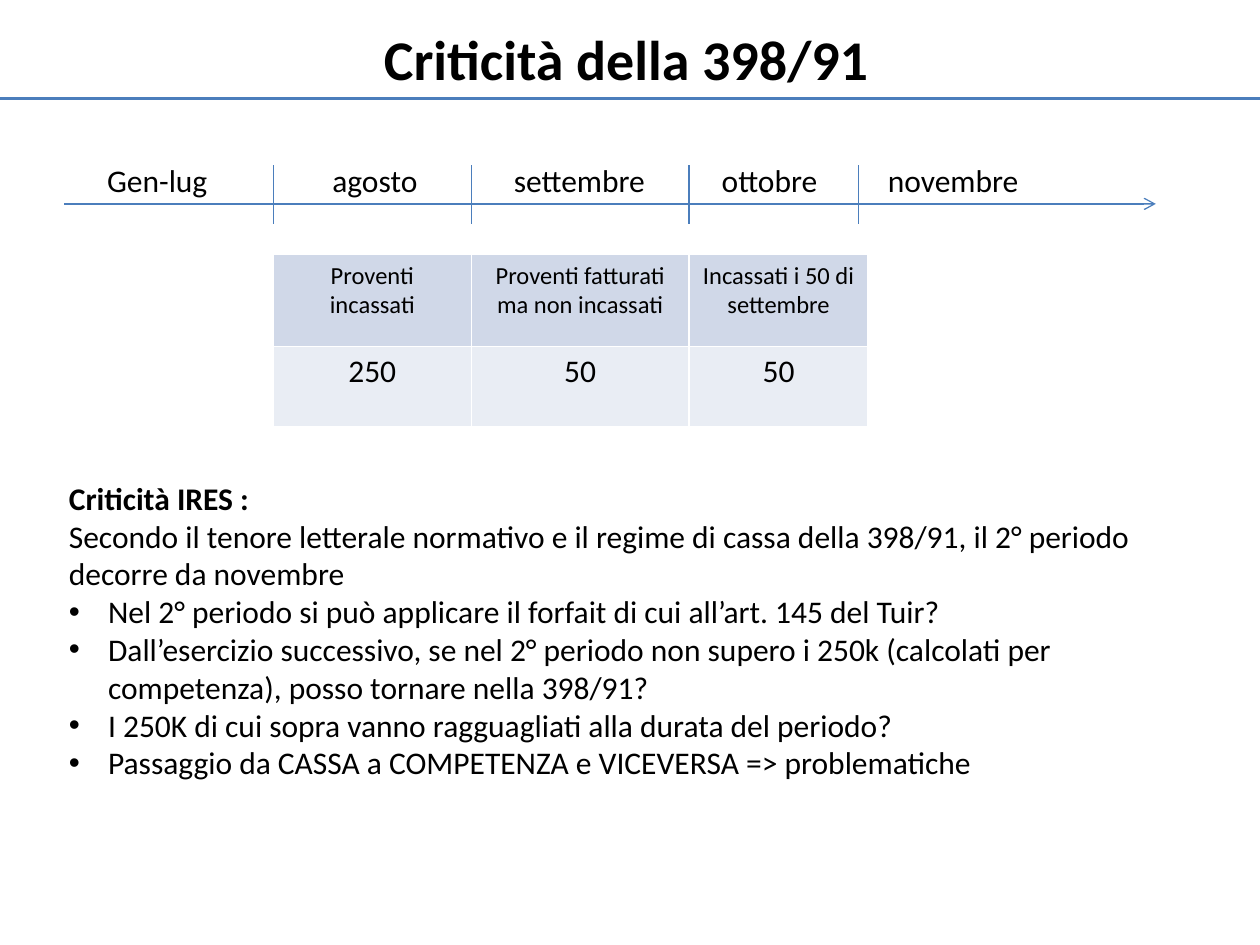
from pptx import Presentation
from pptx.dml.color import RGBColor
from pptx.enum.shapes import MSO_CONNECTOR
from pptx.enum.text import MSO_AUTO_SIZE, PP_ALIGN
from pptx.oxml.ns import qn
from pptx.util import Cm, Pt
from lxml.etree import SubElement

BLACK = RGBColor(0x00, 0x00, 0x00)
BLUE = RGBColor(0x4B, 0x7E, 0xBC)
HEAD = RGBColor(0xD0, 0xD8, 0xE8)
BODY = RGBColor(0xE9, 0xED, 0xF4)

# Content; lengths in cm
title = "Criticità della 398/91"
months = [  # name, left, width
    ("Gen-lug", 1.91, 2.57),
    ("agosto", 6.45, 2.24),
    ("settembre", 10.11, 3.2),
    ("ottobre", 14.3, 2.46),
    ("novembre", 17.65, 3.18),
]
ticks = [5.51, 9.5, 13.89, 17.3]
widths = [3.99, 4.39, 3.61]
rows = [  # height, text size, fill, cells
    (1.85, 14, HEAD, ["Proventi incassati", "Proventi fatturati ma non incassati",
                      "Incassati i 50 di settembre"]),
    (1.63, 18, BODY, ["250", "50", "50"]),
]
notes = [  # text, bold, bullet
    ("Criticità IRES :", True, False),
    ("Secondo il tenore letterale normativo e il regime di cassa della 398/91, "
     "il 2° periodo decorre da novembre", False, False),
    ("Nel 2° periodo si può applicare il forfait di cui all’art. 145 del Tuir?", False, True),
    ("Dall’esercizio successivo, se nel 2° periodo non supero i 250k "
     "(calcolati per competenza), posso tornare nella 398/91?", False, True),
    ("I 250K di cui sopra vanno ragguagliati alla durata del periodo?", False, True),
    ("Passaggio da CASSA a COMPETENZA e VICEVERSA => problematiche", False, True),
]

deck = Presentation()
deck.slide_width, deck.slide_height = Cm(25.4), Cm(19.05)
slide = deck.slides.add_slide(deck.slide_layouts[6])


def write(para, text, size, bold=False):
    run = para.add_run()
    run.text = text
    look = {"name": "Calibri", "size": Pt(size), "bold": bold}
    for key, value in look.items():
        setattr(run.font, key, value)
    run.font.color.rgb = BLACK


def add_box(left, top, width, height, wrap=False):
    frame = slide.shapes.add_textbox(Cm(left), Cm(top), Cm(width), Cm(height)).text_frame
    frame.word_wrap = wrap
    frame.auto_size = MSO_AUTO_SIZE.SHAPE_TO_FIT_TEXT
    return frame


def add_line(x1, y1, x2, y2, weight=0.75, arrow=False):
    line = slide.shapes.add_connector(MSO_CONNECTOR.STRAIGHT, Cm(x1), Cm(y1), Cm(x2), Cm(y2))
    line.line.color.rgb = BLUE
    line.line.width = Pt(weight)
    if arrow:
        SubElement(line.line._get_or_add_ln(), qn("a:tailEnd"), type="arrow")
    SubElement(line._element.spPr, qn("a:effectLst"))


def add_bullet(para):
    props = para._p.get_or_add_pPr()
    props.set("marL", str(Cm(0.79)))
    props.set("indent", str(-Cm(0.79)))
    SubElement(props, qn("a:buFont"), typeface="Arial")
    SubElement(props, qn("a:buChar"), char="•")


# Title and rule
write(add_box(7.49, 0.36, 10.39, 1.62).paragraphs[0], title, 32, True)
add_line(0, 1.98, 25.4, 1.98, 1.5)

# Timeline
add_line(1.3, 4.11, 23.3, 4.11, arrow=True)
for x in ticks:
    add_line(x, 3.33, x, 4.52)
for name, left, width in months:
    write(add_box(left, 3.12, width, 1.02).paragraphs[0], name, 18)

# Table, starting at the first tick
total = sum(row[0] for row in rows)
table = slide.shapes.add_table(len(rows), len(widths), Cm(ticks[0]), Cm(5.13),
                               Cm(sum(widths)), Cm(total)).table
table.first_row = table.horz_banding = False
for col, width in zip(table.columns, widths):
    col.width = Cm(width)
for row, (height, size, fill, texts) in zip(table.rows, rows):
    row.height = Cm(height)
    for cell, text in zip(row.cells, texts):
        cell.fill.solid()
        cell.fill.fore_color.rgb = fill
        para = cell.text_frame.paragraphs[0]
        para.alignment = PP_ALIGN.CENTER
        write(para, text, size)

# Critical points
frame = add_box(1.14, 9.53, 23.34, 6.4, wrap=True)
for i, (text, bold, bullet) in enumerate(notes):
    para = frame.add_paragraph() if i else frame.paragraphs[0]
    write(para, text, 18, bold)
    if bullet:
        add_bullet(para)

deck.save("out.pptx")
